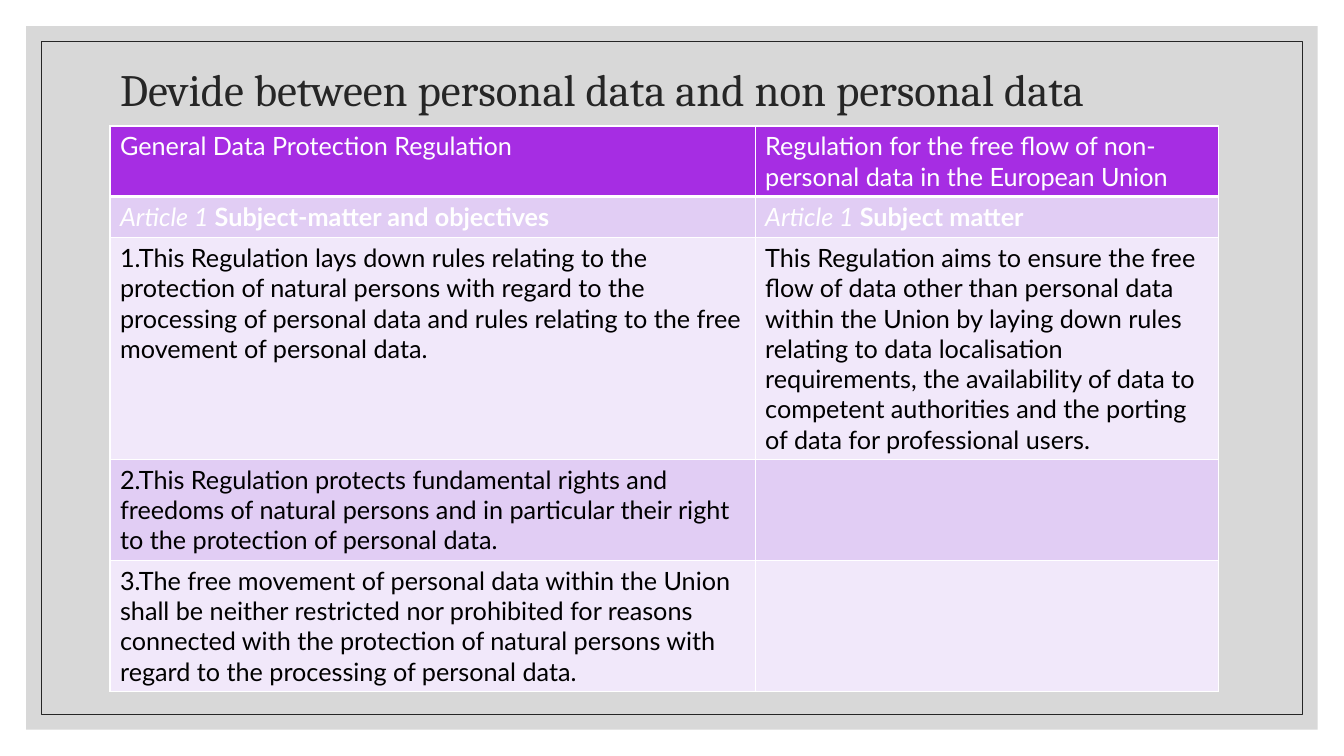
import pptx
import pptx.util
import pptx.dml.color
import pptx.enum.shapes
import pptx.enum.text
import pptx.oxml
import pptx.oxml.ns
from dataclasses import dataclass
from lxml import etree

COLS, ROWS = 160, 90


@dataclass(frozen=True)
class Theme:
    head: str = "Cambria"
    body: str = "Lato"
    big: int = 32
    small: int = 18
    hair: float = 0.5
    thin: int = 1
    thick: int = 3
    grey: str = "BFBFBF"
    dark: str = "262626"
    black: str = "000000"
    white: str = "FFFFFF"
    violet: str = "A62DE3"
    lilac: str = "E1CDF4"
    pale: str = "F1E8FA"


def rgb(code):
    return pptx.dml.color.RGBColor.from_string(code)


def node(parent, tag, **attrs):
    return etree.SubElement(parent, pptx.oxml.ns.qn(tag), attrs)


class Deck:
    """Holds the theme and the current slide; lengths are grid units."""

    def __init__(self, theme):
        self.theme = theme
        self.prs = pptx.Presentation()
        self.prs.slide_width = pptx.util.Inches(13.33)
        self.prs.slide_height = pptx.util.Inches(7.5)
        self.page = self.prs.slides.add_slide(self.prs.slide_layouts[5])

    def x(self, cols):
        return round(self.prs.slide_width * cols / COLS)

    def y(self, rows):
        return round(self.prs.slide_height * rows / ROWS)

    def box(self, left, top, wide, high):
        return self.x(left), self.y(top), self.x(wide), self.y(high)

    def run(self, par, text, font, size, color, bold=False, slant=False):
        run = par.add_run()
        run.text = text
        run.font.name, run.font.size = font, pptx.util.Pt(size)
        run.font.bold, run.font.italic = bold, slant
        run.font.color.rgb = rgb(color)

    def frame(self, inset, fill=None, alpha=100, line=None):
        """Rectangle set in from all four edges by the same amount."""
        rect = self.page.shapes.add_shape(
            pptx.enum.shapes.MSO_SHAPE.RECTANGLE,
            *self.box(inset, inset, COLS - 2 * inset, ROWS - 2 * inset))
        rect.shadow.inherit = False
        if fill:
            rect.fill.solid()
            rect.fill.fore_color.rgb = rgb(fill)
            tint = rect.element.spPr.find(".//" + pptx.oxml.ns.qn("a:srgbClr"))
            node(tint, "a:alpha", val=str(alpha * 1000))
        else:
            rect.fill.background()
        if line:
            rect.line.color.rgb = rgb(line)
            rect.line.width = pptx.util.Pt(self.theme.hair)
        else:
            rect.line.fill.background()

    def title(self, text, *place):
        shape = self.page.shapes.title
        shape.left, shape.top, shape.width, shape.height = self.box(*place)
        shape.element.getparent().append(shape.element)  # in front of frames
        body = shape.text_frame
        body.word_wrap = True
        body.auto_size = pptx.enum.text.MSO_AUTO_SIZE.NONE
        body.vertical_anchor = pptx.enum.text.MSO_ANCHOR.MIDDLE
        par = body.paragraphs[0]
        par.alignment = pptx.enum.text.PP_ALIGN.LEFT
        par.line_spacing = 0.9
        self.run(par, text, self.theme.head, self.theme.big, self.theme.dark)

    def edge(self, cell, sides):
        """Cell borders; sides maps L, R, T, B to widths in points."""
        props = cell._tc.get_or_add_tcPr()
        for spot, (side, width) in enumerate(sides.items()):
            line = node(props, "a:ln" + side, w=str(pptx.util.Pt(width)))
            node(node(line, "a:solidFill"), "a:srgbClr", val=self.theme.white)
            props.insert(spot, line)

    def table(self, left, top, wide, high, data):
        """Rows of data are (fill, ink, cells); a cell is a list of runs."""
        grid = self.page.shapes.add_table(
            len(data), len(wide),
            *self.box(left, top, sum(wide), sum(high))).table
        grid.first_row = grid.horz_banding = False
        for col, width in zip(grid.columns, wide):
            col.width = self.x(width)
        for row, height in zip(grid.rows, high):
            row.height = self.y(height)
        for r, (fill, ink, cells) in enumerate(data):
            for c, runs in enumerate(cells):
                cell = grid.cell(r, c)
                cell.fill.solid()
                cell.fill.fore_color.rgb = rgb(fill)
                thin, thick = self.theme.thin, self.theme.thick
                self.edge(cell, {"L": thin, "R": thin,
                                 "T": thick if r == 1 else thin,
                                 "B": thick if r == 0 else thin})
                par = cell.text_frame.paragraphs[0]
                par.font.size = pptx.util.Pt(self.theme.small)
                for text, style in runs:
                    self.run(par, text, self.theme.body, self.theme.small,
                             ink, **style)


def plain(text):
    return [(text, {})]


def clause(text):
    return [("Article 1 ", {"slant": True}), (text, {"bold": True})]


def main():
    look = Theme()
    deck = Deck(look)

    # Backdrop
    deck.frame(3.12, fill=look.grey, alpha=60)
    deck.frame(4.92, line=look.dark)

    # Title
    deck.title("Devide between personal data and non personal data",
               13.1, 5.5, 133.8, 10.9)

    # The two regulations side by side
    data = [
        (look.violet, look.white, [
            plain("General Data Protection Regulation"),
            plain("Regulation for the free flow of non-personal data "
                  "in the European Union")]),
        (look.lilac, look.white, [
            clause("Subject-matter and objectives"),
            clause("Subject matter")]),
        (look.pale, look.black, [
            plain("1.This Regulation lays down rules relating to the "
                  "protection of natural persons with regard to the "
                  "processing of personal data and rules relating to the "
                  "free movement of personal data."),
            plain("This Regulation aims to ensure the free flow of data "
                  "other than personal data within the Union by laying down "
                  "rules relating to data localisation requirements, the "
                  "availability of data to competent authorities and the "
                  "porting of data for professional users.")]),
        (look.lilac, look.black, [
            plain("2.This Regulation protects fundamental rights and "
                  "freedoms of natural persons and in particular their "
                  "right to the protection of personal data."), []]),
        (look.pale, look.black, [
            plain("3.The free movement of personal data within the Union "
                  "shall be neither restricted nor prohibited for reasons "
                  "connected with the protection of natural persons with "
                  "regard to the processing of personal data."), []]),
    ]
    deck.table(13.1, 15, (76.8, 55.2), (8.4, 4.9, 26.4, 12, 15.6), data)

    deck.prs.save("out.pptx")


if __name__ == "__main__":
    main()
